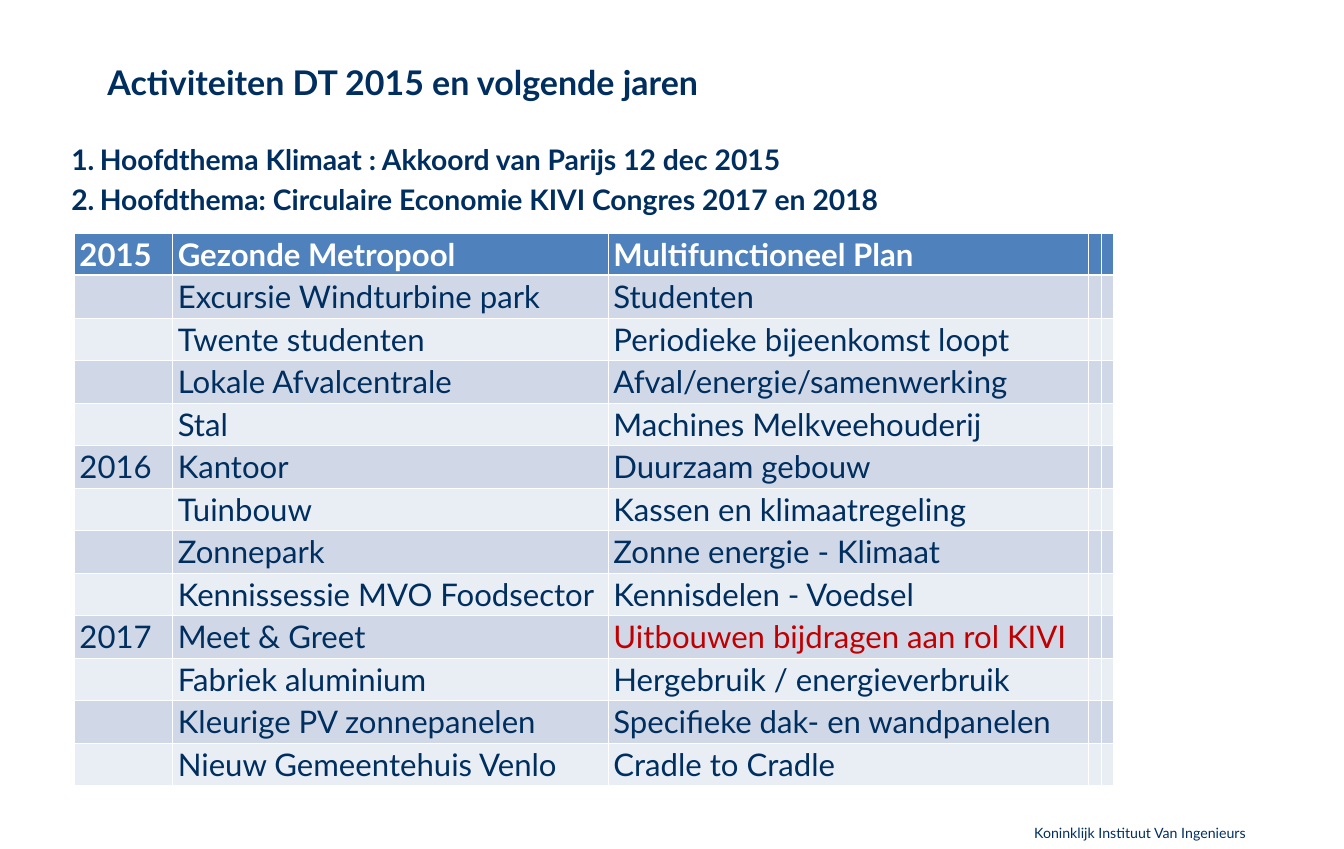
from pptx import Presentation
from pptx import util as u
from pptx.dml.color import RGBColor
from pptx.enum import text
from pptx.oxml.ns import qn
from lxml import etree

PX = 9144  # EMU per px, 100 px to the inch
FONT = "Lato"
NAVY, WHITE, RED = "002F5F", "FFFFFF", "C00000"
HEADER, BANDS = "4F81BD", ("D0D8E8", "E9EDF4")

THEMES = [
    "Hoofdthema Klimaat : Akkoord van Parijs 12 dec 2015",
    "Hoofdthema: Circulaire Economie KIVI Congres 2017 en 2018",
]
COLUMNS = [193, 855, 943, 24, 24]
ROW_HEIGHT = 83
ACTIVITIES = [
    ("2015", "Gezonde Metropool", "Multifunctioneel Plan"),
    ("", "Excursie Windturbine park", "Studenten"),
    ("", "Twente studenten", "Periodieke bijeenkomst loopt"),
    ("", "Lokale Afvalcentrale", "Afval/energie/samenwerking"),
    ("", "Stal", "Machines Melkveehouderij"),
    ("2016", "Kantoor", "Duurzaam gebouw"),
    ("", "Tuinbouw", "Kassen en klimaatregeling"),
    ("", "Zonnepark", "Zonne energie - Klimaat"),
    ("", "Kennissessie MVO Foodsector", "Kennisdelen - Voedsel"),
    ("2017", "Meet & Greet", "Uitbouwen bijdragen aan rol KIVI"),
    ("", "Fabriek aluminium", "Hergebruik / energieverbruik"),
    ("", "Kleurige PV zonnepanelen", "Specifieke dak- en wandpanelen"),
    ("", "Nieuw Gemeentehuis Venlo", "Cradle to Cradle"),
]
HIGHLIGHT = "Uitbouwen bijdragen aan rol KIVI"


def rgb(value):
    return RGBColor.from_string(value)


def scaled(box):
    return [n * PX for n in box]


def add_run(p, words, size, color=NAVY, bold=False):
    r = p.add_run()
    r.text = words
    r.font.name, r.font.size, r.font.bold = FONT, u.Pt(size), bold
    r.font.color.rgb = rgb(color)


def set_frame(sp, box):
    sp.left, sp.top, sp.width, sp.height = scaled(box)
    tf = sp.text_frame
    tf.word_wrap = True
    tf.auto_size = text.MSO_AUTO_SIZE.NONE
    tf.vertical_anchor = text.MSO_ANCHOR.TOP
    return tf


def add_title(s, box):
    p = set_frame(s.shapes.title, box).paragraphs[0]
    p.alignment = text.PP_ALIGN.LEFT
    add_run(p, "Activiteiten DT 2015 en volgende jaren", 48, bold=True)


def add_themes(s, box):
    tf = set_frame(s.placeholders[1], box)
    for i, theme in enumerate(THEMES):
        p = tf.add_paragraph() if i else tf.paragraphs[0]
        pPr = p._p.get_or_add_pPr()
        pPr.set("marL", str(56 * PX))
        pPr.set("indent", str(-56 * PX))
        etree.SubElement(pPr, qn("a:buFont"), typeface=FONT)
        etree.SubElement(pPr, qn("a:buAutoNum"), type="arabicPeriod")
        p.space_before = u.Pt(8 if i else 0)
        add_run(p, theme, 40, bold=True)


def set_borders(cell, top, bottom):
    tcPr = cell._tc.get_or_add_tcPr()
    for side, points in (("L", 1), ("R", 1), ("T", top), ("B", bottom)):
        ln = etree.SubElement(tcPr, qn("a:ln" + side), w=str(u.Pt(points)))
        fill = etree.SubElement(ln, qn("a:solidFill"))
        etree.SubElement(fill, qn("a:srgbClr"), val=WHITE)


def add_activities(s, box):
    table = s.shapes.add_table(len(ACTIVITIES), len(COLUMNS), *scaled(box)).table
    for column, width in zip(table.columns, COLUMNS):
        column.width = width * PX
    for i, entries in enumerate(ACTIVITIES):
        table.rows[i].height = ROW_HEIGHT * PX
        for j in range(len(COLUMNS)):
            cell = table.cell(i, j)
            set_borders(cell, 3 if i == 1 else 1, 3 if i == 0 else 1)
            cell.fill.solid()
            cell.fill.fore_color.rgb = rgb(BANDS[(i - 1) % 2] if i else HEADER)
            words = entries[j] if j < len(entries) else ""
            if words:
                color = RED if words == HIGHLIGHT else NAVY if i else WHITE
                add_run(cell.text_frame.paragraphs[0], words, 44, color, i == 0)


def add_footer(s, box):
    tf = set_frame(s.shapes.add_textbox(*scaled(box)), box)
    add_run(tf.paragraphs[0], "Koninklijk Instituut Van Ingenieurs", 20)


def main():
    prs = Presentation()
    prs.slide_width, prs.slide_height = scaled((2638, 1666))
    s = prs.slides.add_slide(prs.slide_layouts[1])
    # Heading and numbered themes
    add_title(s, (201, 116, 1477, 172))
    add_themes(s, (130, 274, 2017, 1196))
    # Activities by year
    add_activities(s, (146, 457, sum(COLUMNS), ROW_HEIGHT * len(ACTIVITIES)))
    # Institute name
    add_footer(s, (2020, 1612, 472, 47))
    prs.save("out.pptx")


if __name__ == "__main__":
    main()
